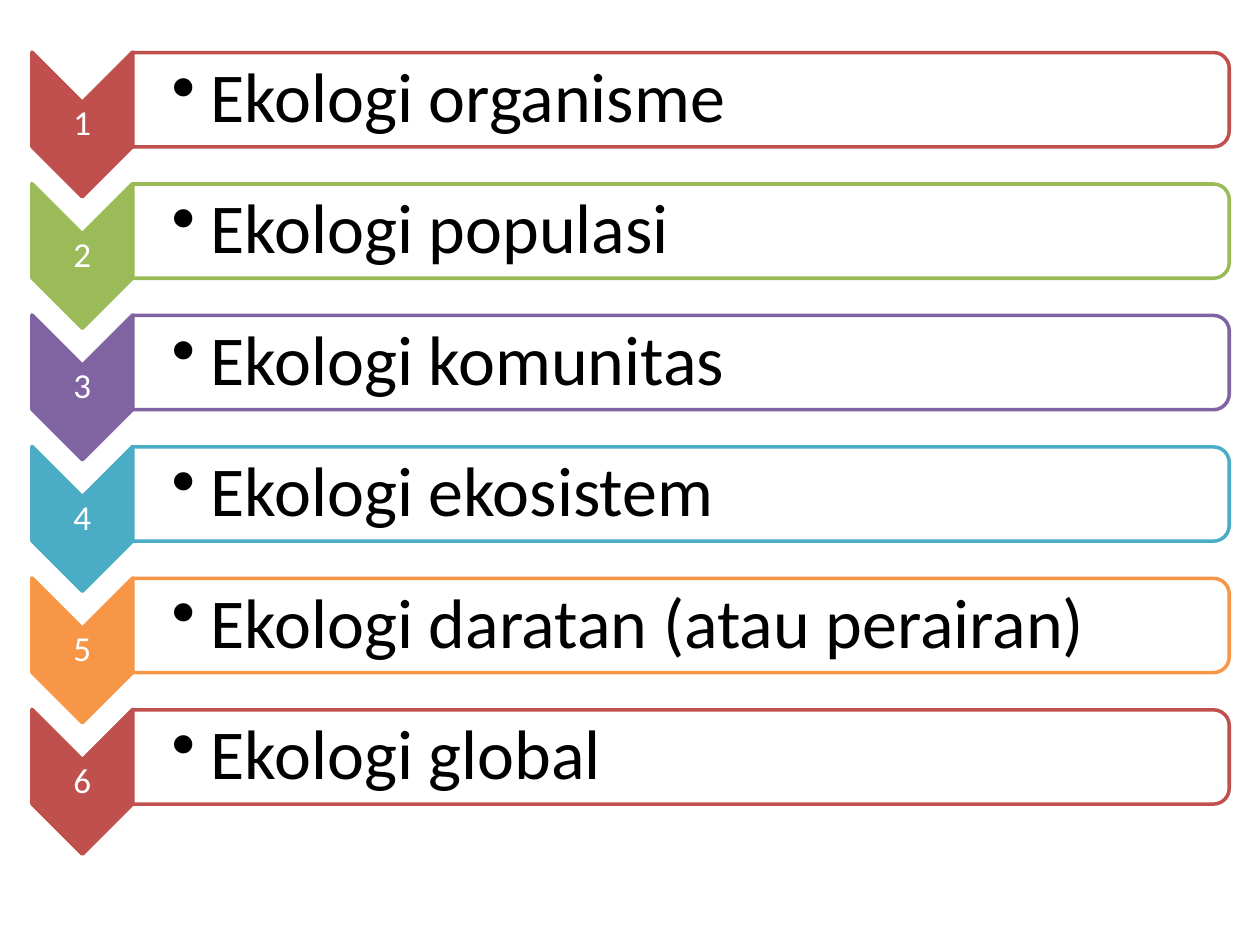
from lxml.etree import SubElement as Sub
from pptx import Presentation
from pptx.dml.color import RGBColor
from pptx.enum.shapes import MSO_SHAPE as Shape
from pptx.enum.text import MSO_ANCHOR as Anchor, PP_ALIGN as Align
from pptx.oxml.ns import qn
from pptx.util import Cm, Pt

RED = RGBColor(0xC0, 0x50, 0x4D)
GREEN = RGBColor(0x9B, 0xBB, 0x59)
PURPLE = RGBColor(0x80, 0x64, 0xA2)
TEAL = RGBColor(0x4B, 0xAC, 0xC6)
ORANGE = RGBColor(0xF7, 0x96, 0x46)
WHITE = RGBColor(0xFF, 0xFF, 0xFF)
BLACK = RGBColor(0, 0, 0)

FONT = "Calibri"
TOP = 2.01     # middle of the first bar, in cm
PITCH = 2.65   # from one row to the next
DROP = 0.5     # how far a chevron's middle lies below its bar's
INDENT = 0.79

ROWS = [
    ("Ekologi organisme", RED),
    ("Ekologi populasi", GREEN),
    ("Ekologi komunitas", PURPLE),
    ("Ekologi ekosistem", TEAL),
    ("Ekologi daratan (atau perairan)", ORANGE),
    ("Ekologi global", RED),
]


def frame(mid_x, mid_y, wide, high):
    """Left, top, width and height of a box given by its middle."""
    return Cm(mid_x - wide / 2), Cm(mid_y - high / 2), Cm(wide), Cm(high)


def add_turned(slide, kind, box, fill, line):
    """Add a shape turned a quarter to the right."""
    shape = slide.shapes.add_shape(kind, *box)
    shape.rotation = 90
    shape.shadow.inherit = False
    shape.fill.solid()
    shape.fill.fore_color.rgb = fill
    shape.line.color.rgb = line
    shape.line.width = Pt(2)
    return shape


def fade(shape, percent):
    """Set the opacity of a solid fill."""
    color = shape.element.spPr.find(qn("a:solidFill"))[0]
    Sub(color, qn("a:alpha"), val=str(percent * 1000))


def add_label(slide, box, text, size, color, left, inset):
    label = slide.shapes.add_textbox(*box)
    body = label.text_frame
    body.word_wrap = True
    body.vertical_anchor = Anchor.MIDDLE
    body.margin_left = Cm(left)
    body.margin_top = body.margin_right = body.margin_bottom = Cm(inset)
    para = body.paragraphs[0]
    para.line_spacing = 0.9
    run = para.add_run()
    run.text = text
    run.font.name = FONT
    run.font.size = Pt(size)
    run.font.color.rgb = color
    return para


def add_bullet(para):
    para.level = 1
    props = para._p.get_or_add_pPr()
    props.set("marL", str(Cm(INDENT)))
    props.set("indent", str(-Cm(INDENT)))
    Sub(props, qn("a:buChar"), char="•")


def add_row(slide, number, text, color):
    mid = TOP + (number - 1) * PITCH
    low = mid + DROP
    add_turned(slide, Shape.CHEVRON, frame(1.66, low, 2.92, 2.03), color, color)
    count = add_label(slide, frame(1.66, low, 2.03, 0.86), str(number), 20,
                      WHITE, 0.03, 0.03)
    count.alignment = Align.CENTER
    bar = add_turned(slide, Shape.ROUND_2_SAME_RECTANGLE,
                     frame(13.73, mid, 1.9, 22.1), WHITE, color)
    fade(bar, 90)
    add_bullet(add_label(slide, frame(13.67, mid, 22, 1.7), text, 40,
                         BLACK, INDENT, 0.07))


def main():
    deck = Presentation()
    deck.slide_width, deck.slide_height = Cm(25.4), Cm(19.05)
    slide = deck.slides.add_slide(deck.slide_layouts[6])
    for number, (text, color) in enumerate(ROWS, 1):
        add_row(slide, number, text, color)
    deck.save("out.pptx")


if __name__ == "__main__":
    main()
